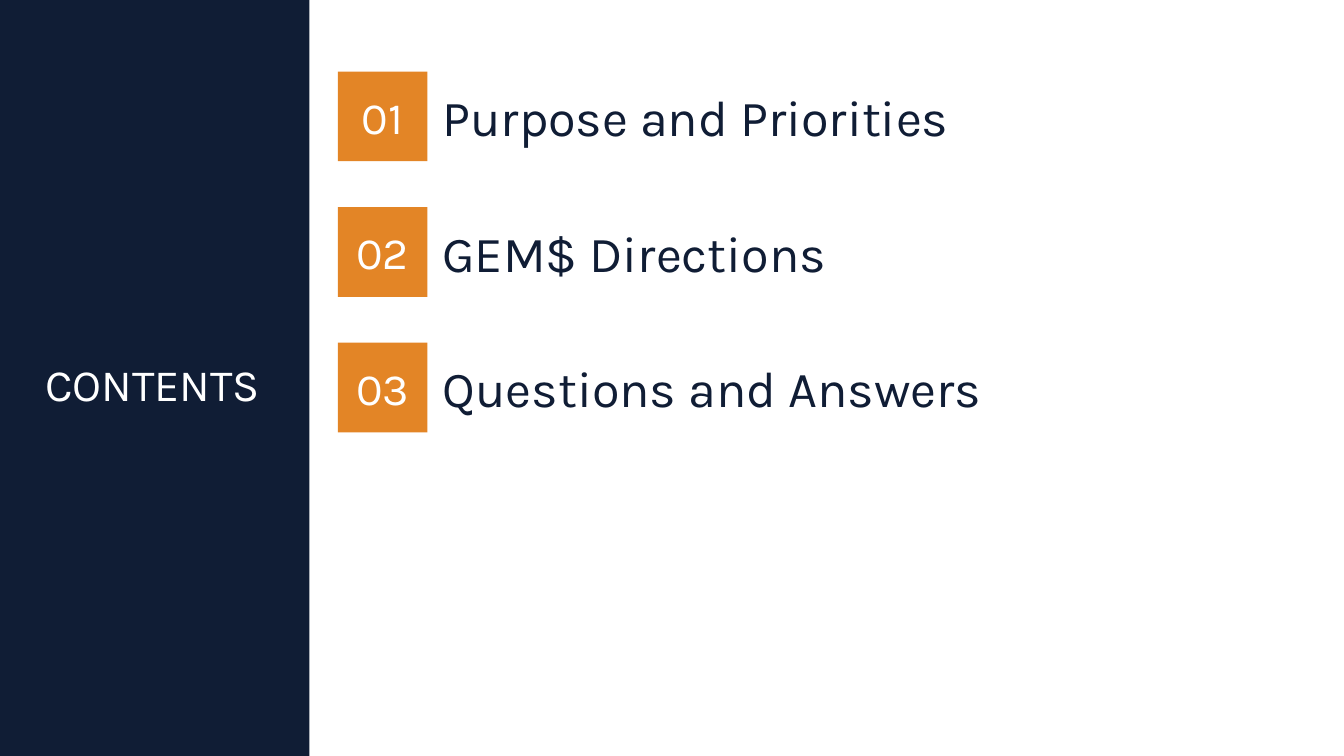
from pptx import Presentation
from pptx.dml.color import RGBColor
from pptx.enum.shapes import MSO_SHAPE
from pptx.enum.text import MSO_ANCHOR, PP_ALIGN
from pptx.util import Inches, Pt

NAVY = RGBColor(0x10, 0x1D, 0x35)
ORANGE = RGBColor(0xE3, 0x85, 0x26)
WHITE = RGBColor(0xFF, 0xFF, 0xFF)
FONT = "Karla"

WIDE, HIGH = 13.33, 7.5
SIDE = 3.07             # width of the side panel
TOP, STEP = 0.71, 1.345  # first row and distance between rows
TILE, GAP = 0.89, 0.05   # number tile and space before its label
TOPICS = ["Purpose and Priorities", "GEM$ Directions", "Questions and Answers"]


def write(shape, text, size, color, align, anchor=MSO_ANCHOR.MIDDLE):
    frame = shape.text_frame
    frame.text = text
    frame.word_wrap = True
    frame.vertical_anchor = anchor
    line = frame.paragraphs[0]
    line.alignment = align
    font = line.runs[0].font
    font.name, font.size, font.color.rgb = FONT, Pt(size), color


def add_block(shapes, box, color):
    block = shapes.add_shape(MSO_SHAPE.RECTANGLE, *map(Inches, box))
    block.shadow.inherit = False
    block.fill.solid()
    block.fill.fore_color.rgb = color
    block.line.fill.background()
    return block


def add_side(shapes, box):
    left, top, width, height = box
    add_block(shapes, box, NAVY)
    title = shapes.add_textbox(*map(Inches, (
        left, top + height * 0.465, width - 0.04, 0.64)))
    write(title, "CONTENTS", 32, WHITE, PP_ALIGN.CENTER, MSO_ANCHOR.TOP)


def add_topic(shapes, box, number, topic):
    left, top, width, height = box
    group = shapes.add_group_shape().shapes
    tile = add_block(group, (left, top, height, height), ORANGE)
    write(tile, f"{number:02}", 32, WHITE, PP_ALIGN.CENTER)
    shift = height + GAP
    label = group.add_textbox(*map(Inches, (
        left + shift, top, width - shift, height)))
    write(label, topic, 36, NAVY, PP_ALIGN.LEFT)


def add_list(shapes, box):
    left, top, width, _ = box
    for row, topic in enumerate(TOPICS):
        place = (left, top + row * STEP, width, TILE)
        add_topic(shapes, place, row + 1, topic)


def main():
    deck = Presentation()
    deck.slide_width, deck.slide_height = Inches(WIDE), Inches(HIGH)
    slide = deck.slides.add_slide(deck.slide_layouts[6])
    slide.background.fill.solid()
    slide.background.fill.fore_color.rgb = WHITE

    # Side panel with the heading
    add_side(slide.shapes, (0, 0, SIDE, HIGH))

    # Numbered topics
    left = SIDE + 0.28
    add_list(slide.shapes, (left, TOP, WIDE - left - 0.31, HIGH - TOP))

    deck.save("out.pptx")


if __name__ == "__main__":
    main()
